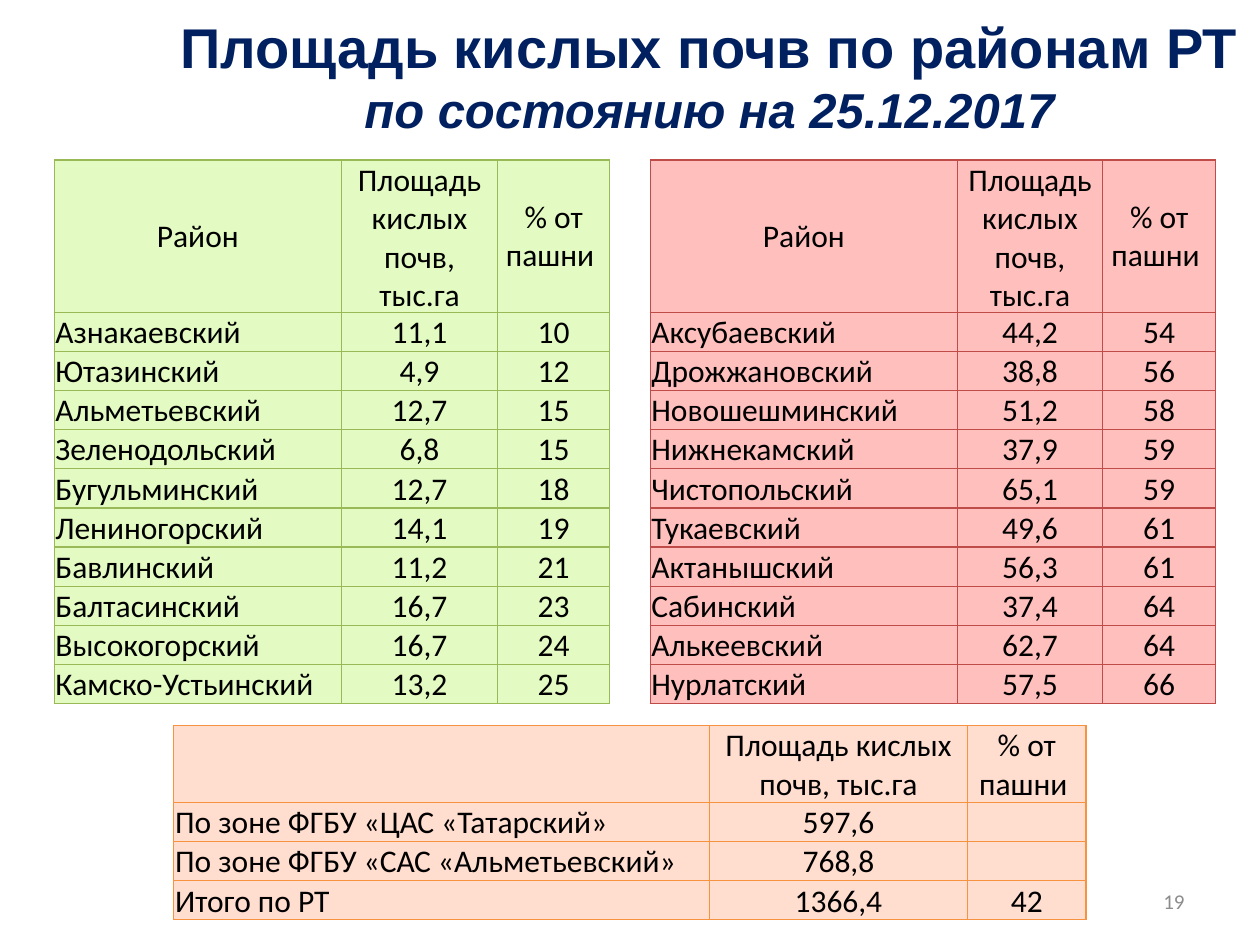
from pptx import Presentation
from pptx.dml.color import RGBColor
from pptx.enum.text import MSO_ANCHOR as Anchor, MSO_AUTO_SIZE as Auto, PP_ALIGN as Align
from pptx.oxml import parse_xml
from pptx.oxml.ns import nsdecls
from pptx.util import Inches, Pt

NAVY = RGBColor(0x00, 0x20, 0x60)
BLACK = RGBColor(0x00, 0x00, 0x00)
GRAY = RGBColor(0x8C, 0x8C, 0x8C)
LIME = RGBColor(0xE3, 0xFB, 0xC2)
GREEN = RGBColor(0x98, 0xB9, 0x55)
PINK = RGBColor(0xFF, 0xBF, 0xBD)
RED = RGBColor(0xBF, 0x4C, 0x48)
PEACH = RGBColor(0xFF, 0xDD, 0xCF)
ORANGE = RGBColor(0xF6, 0x92, 0x40)


def style(para, face, size, color, align):
    para.alignment = align
    para.font.name = face
    para.font.size = Pt(size)
    para.font.color.rgb = color


def border(cell, color):
    props = cell._tc.get_or_add_tcPr()
    for side in ("lnL", "lnR", "lnT", "lnB"):
        props.append(parse_xml(
            f'<a:{side} {nsdecls("a")} w="{Pt(0.75)}"><a:solidFill>'
            f'<a:srgbClr val="{color}"/></a:solidFill></a:{side}>'))


deck = Presentation()
deck.slide_width, deck.slide_height = Inches(10), Inches(7.5)
slide = deck.slides.add_slide(deck.slide_layouts[5])

title = slide.shapes.title
title.left, title.top = Inches(1.26), Inches(0.05)
title.width, title.height = Inches(8.74), Inches(1.11)
frame = title.text_frame
frame.text = "Площадь кислых почв по районам РТ\nпо состоянию на 25.12.2017"
frame.vertical_anchor = Anchor.TOP
frame.auto_size = Auto.SHAPE_TO_FIT_TEXT
for para, size in zip(frame.paragraphs, (32, 28)):
    style(para, "Arial", size, NAVY, Align.CENTER)
    para.font.bold = True
frame.paragraphs[1].font.italic = True

AREA, SHARE = "Площадь кислых почв, тыс.га", "% от пашни "
HEAD = ("Район", AREA, SHARE)
low = [
    HEAD,
    ("Азнакаевский", "11,1", "10"),
    ("Ютазинский", "4,9", "12"),
    ("Альметьевский", "12,7", "15"),
    ("Зеленодольский", "6,8", "15"),
    ("Бугульминский", "12,7", "18"),
    ("Лениногорский", "14,1", "19"),
    ("Бавлинский", "11,2", "21"),
    ("Балтасинский", "16,7", "23"),
    ("Высокогорский", "16,7", "24"),
    ("Камско-Устьинский", "13,2", "25"),
]
high = [
    HEAD,
    ("Аксубаевский", "44,2", "54"),
    ("Дрожжановский", "38,8", "56"),
    ("Новошешминский", "51,2", "58"),
    ("Нижнекамский", "37,9", "59"),
    ("Чистопольский", "65,1", "59"),
    ("Тукаевский", "49,6", "61"),
    ("Актанышский", "56,3", "61"),
    ("Сабинский", "37,4", "64"),
    ("Алькеевский", "62,7", "64"),
    ("Нурлатский", "57,5", "66"),
]
total = [
    ("", AREA, SHARE),
    ("По зоне ФГБУ «ЦАС «Татарский»", "597,6", ""),
    ("По зоне ФГБУ «САС «Альметьевский»", "768,8", ""),
    ("Итого по РТ", "1366,4", "42"),
]

tables = [
    (low, 0.43, 1.27, 4.3, 1.21, (2.28, 1.24, 0.89), LIME, GREEN, Anchor.BOTTOM),
    (high, 5.16, 1.27, 4.3, 1.21, (2.44, 1.15, 0.9), PINK, RED, Anchor.BOTTOM),
    (total, 1.38, 5.76, 1.54, 0.61, (4.25, 2.05, 0.94), PEACH, ORANGE, Anchor.MIDDLE),
]
for data, left, top, height, first, widths, fill, line, anchor in tables:
    table = slide.shapes.add_table(
        len(data), len(widths), Inches(left), Inches(top),
        Inches(sum(widths)), Inches(height)).table
    table.first_row = table.horz_banding = False
    for col, width in zip(table.columns, widths):
        col.width = Inches(width)
    for i, values in enumerate(data):
        step = (height - first) / (len(data) - 1)
        table.rows[i].height = Inches(step if i else first)
        for j, value in enumerate(values):
            cell = table.cell(i, j)
            cell.text = value
            cell.margin_left = cell.margin_right = cell.margin_top = Inches(0.01)
            cell.margin_bottom = 0
            cell.vertical_anchor = anchor if i else Anchor.MIDDLE
            border(cell, line)
            cell.fill.solid()
            cell.fill.fore_color.rgb = fill
            align = Align.LEFT if i and j == 0 else Align.CENTER
            style(cell.text_frame.paragraphs[0], "Calibri", 18, BLACK, align)

page = slide.shapes.add_textbox(Inches(7.17), Inches(6.95), Inches(2.33), Inches(0.4))
page.text_frame.text = "19"
page.text_frame.word_wrap = True
page.text_frame.vertical_anchor = Anchor.MIDDLE
style(page.text_frame.paragraphs[0], "Calibri", 12, GRAY, Align.RIGHT)

deck.save("out.pptx")
